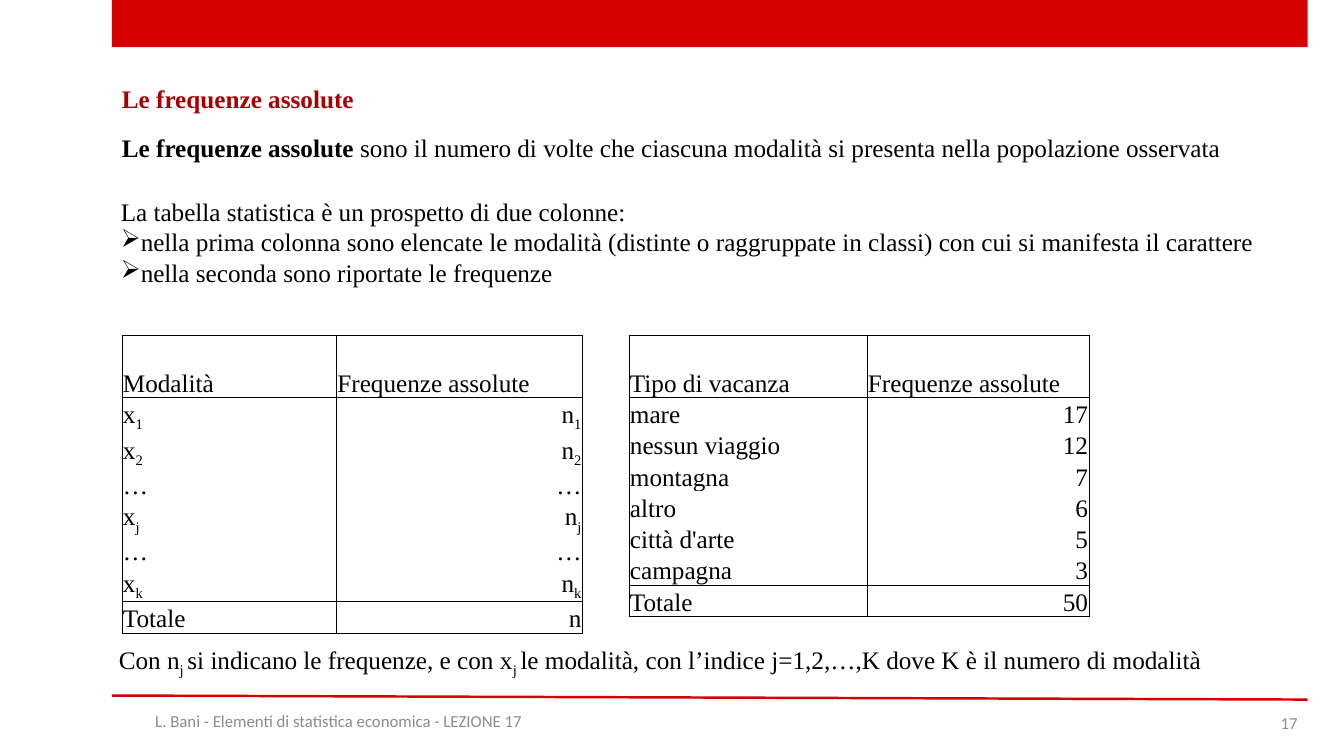
from lxml import etree
from pptx import Presentation
from pptx.dml.color import RGBColor
from pptx.enum.shapes import MSO_CONNECTOR, MSO_SHAPE
from pptx.enum.text import MSO_ANCHOR, PP_ALIGN
from pptx.oxml.ns import qn
from pptx.util import Pt

COLORS = {"red": "D60000", "title": "A80000", "text": "000000",
          "footer": "8C8C8C", "cell": "FFFFFF"}
SERIF, SANS = "Times New Roman", "Calibri"
LEFT, CENTER, RIGHT, JUSTIFY = PP_ALIGN.LEFT, PP_ALIGN.CENTER, PP_ALIGN.RIGHT, PP_ALIGN.JUSTIFY
TOP, MIDDLE, BOTTOM = MSO_ANCHOR.TOP, MSO_ANCHOR.MIDDLE, MSO_ANCHOR.BOTTOM
RECT, STRAIGHT = MSO_SHAPE.RECTANGLE, MSO_CONNECTOR.STRAIGHT
PLAIN, BOLD, SUB = "plain", "bold", "sub"
BULLET = "➢"


def rgb(name):
    return RGBColor.from_string(COLORS[name])


def indexed(letter, index):
    """Runs for a letter with a subscript."""
    return [(letter, PLAIN), (index, SUB)]


class SlideBuilder:
    def __init__(self, slide):
        self.slide = slide

    def bar(self, x, y, w, h, color):
        sp = self.slide.shapes.add_shape(RECT, Pt(x), Pt(y), Pt(w), Pt(h))
        sp.shadow.inherit = False
        sp.fill.solid()
        sp.fill.fore_color.rgb = rgb(color)
        sp.line.fill.background()

    def line(self, x1, y1, x2, y2, color, width):
        cn = self.slide.shapes.add_connector(STRAIGHT, Pt(x1), Pt(y1), Pt(x2), Pt(y2))
        cn.line.color.rgb = rgb(color)
        cn.line.width = Pt(width)
        etree.SubElement(cn._element.spPr, qn("a:effectLst"))

    def add_runs(self, p, runs, align=LEFT, size=18, font=SERIF, color="text"):
        """Fill a paragraph from a string or a list of (text, kind) runs."""
        p.alignment = align
        for text, kind in [(runs, PLAIN)] if isinstance(runs, str) else runs:
            r = p.add_run()
            r.text = text
            r.font.size, r.font.name = Pt(size), font
            r.font.color.rgb = rgb(color)
            r.font.bold = kind == BOLD
            if kind == SUB:
                r._r.get_or_add_rPr().set("baseline", "-25000")

    def bullet(self, p):
        pPr = p._p.get_or_add_pPr()
        pPr.set("marL", "0")
        pPr.set("indent", "0")
        etree.SubElement(pPr, qn("a:buChar")).set("char", BULLET)

    def text(self, x, y, w, h, paragraphs, anchor=TOP, spacing=None, bulleted=(), **style):
        tf = self.slide.shapes.add_textbox(Pt(x), Pt(y), Pt(w), Pt(h)).text_frame
        tf.word_wrap = True
        tf.vertical_anchor = anchor
        for i, runs in enumerate(paragraphs):
            p = tf.add_paragraph() if i else tf.paragraphs[0]
            if spacing:
                p.line_spacing = spacing
            if i in bulleted:
                self.bullet(p)
            self.add_runs(p, runs, **style)

    def borders(self, cell, sides):
        """Draw the given sides of a cell and hide the others."""
        tcPr = cell._tc.get_or_add_tcPr()
        for side in "LRTB":
            ln = etree.SubElement(tcPr, qn(f"a:ln{side}"), w=str(Pt(0.5)))
            if side in sides:
                fill = etree.SubElement(ln, qn("a:solidFill"))
                etree.SubElement(fill, qn("a:srgbClr"), val=COLORS["text"])
            else:
                etree.SubElement(ln, qn("a:noFill"))

    def table(self, x, y, widths, rows, header_height=44.2, row_height=22.3):
        last = len(rows) - 1
        height = header_height + last * row_height
        table = self.slide.shapes.add_table(
            len(rows), len(widths), Pt(x), Pt(y), Pt(sum(widths)), Pt(height)).table
        table.first_row = table.horz_banding = False
        for column, width in zip(table.columns, widths):
            column.width = Pt(width)
        for i, values in enumerate(rows):
            table.rows[i].height = Pt(row_height if i else header_height)
            sides = "LR" + "T" * (i in (0, 1, last)) + "B" * (i in (0, last - 1, last))
            for j, value in enumerate(values):
                cell = table.cell(i, j)
                cell.margin_left = cell.margin_right = cell.margin_top = Pt(0.72)
                cell.margin_bottom = 0
                cell.vertical_anchor = BOTTOM
                self.borders(cell, sides)
                cell.fill.solid()
                cell.fill.fore_color.rgb = rgb("cell")
                self.add_runs(cell.text_frame.paragraphs[0], value, RIGHT if i and j else LEFT)


def main():
    prs = Presentation()
    prs.slide_width, prs.slide_height = Pt(960), Pt(540)
    s = SlideBuilder(prs.slides.add_slide(prs.slide_layouts[6]))

    s.bar(80, 0, 854, 33.8, "red")
    s.line(80, 496.8, 934, 499.7, "red", 1.75)

    s.text(80, 53.3, 240, 36.7, [[("Le frequenze assolute", BOLD)]],
           MIDDLE, 0.9, color="title")
    s.text(80, 93.6, 802, 41.8, [[
        ("Le frequenze assolute", BOLD),
        (" sono il numero di volte che ciascuna modalità si presenta "
         "nella popolazione osservata", PLAIN)]], spacing=0.9, align=JUSTIFY)
    s.text(79.2, 136.8, 832.3, 72.7, [
        "La tabella statistica è un prospetto di due colonne:",
        "nella prima colonna sono elencate le modalità (distinte o raggruppate "
        "in classi) con cui si manifesta il carattere",
        "nella seconda sono riportate le frequenze"], bulleted=(1, 2), align=JUSTIFY)

    indices = ["1", "2", None, "j", None, "k"]
    symbols = [[indexed(letter, i) if i else "…" for letter in "xn"] for i in indices]
    s.table(87.1, 239.8, [153.2, 175.8],
            [["Modalità", "Frequenze assolute"], *symbols, ["Totale", "n"]])

    holidays = [["mare", "17"], ["nessun viaggio", "12"], ["montagna", "7"],
                ["altro", "6"], ["città d'arte", "5"], ["campagna", "3"]]
    s.table(449.3, 239.8, [170, 158.6],
            [["Tipo di vacanza", "Frequenze assolute"], *holidays, ["Totale", "50"]])

    s.text(77.8, 456.5, 804.2, 28.8, [[
        *indexed("Con n", "j "),
        *indexed("si indicano le frequenze, e con x", "j "),
        ("le modalità, con l’indice j=1,2,…,K dove K è il numero di modalità", PLAIN)]],
        align=JUSTIFY)

    footer = {"anchor": MIDDLE, "size": 12, "font": SANS, "color": "footer"}
    s.text(80, 500.4, 324, 28.8, ["L. Bani - Elementi di statistica economica - LEZIONE 17"],
           align=CENTER, **footer)
    s.text(718, 501.8, 216, 28.8, ["17"], align=RIGHT, **footer)

    prs.save("out.pptx")


if __name__ == "__main__":
    main()
